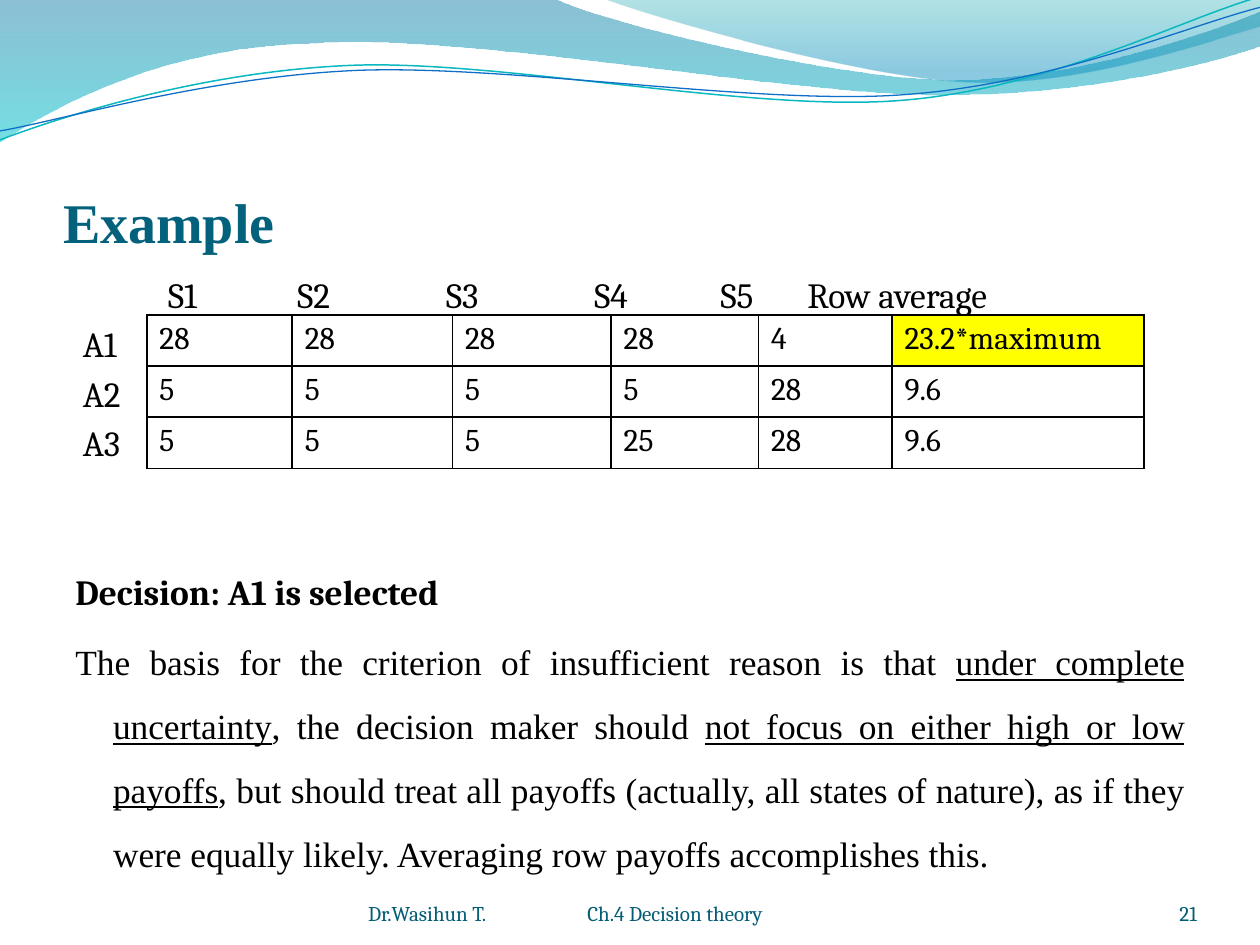
"""Build the decision theory example slide with its payoff table."""
from dataclasses import dataclass
from typing import NamedTuple

from lxml.etree import SubElement
from pptx import Presentation
from pptx.dml.color import RGBColor as Rgb
from pptx.enum.text import MSO_ANCHOR as Anchor, PP_ALIGN as Align
from pptx.oxml.ns import qn
from pptx.util import Cm, Pt


@dataclass(frozen=True)
class Theme:
    heading: str = "04617B"
    footer: str = "045D75"
    ink: str = "000000"
    highlight: str = "FFFF00"
    serif: str = "Times New Roman"
    body: str = "Cambria"
    heading_size: float = 32
    body_size: float = 20.2
    cell_size: float = 18
    footer_size: float = 12
    space_before: float = 4


class Box(NamedTuple):
    left: float
    top: float
    width: float
    height: float


class Stop(NamedTuple):
    position: float
    color: str
    opacity: int


class Wave(NamedTuple):
    start: tuple
    segments: tuple
    stops: tuple = ()
    line: tuple = ()


class Label(NamedTuple):
    text: str
    gap_after: float = 0


THEME = Theme()
WAVES = (
    Wave((0, 0), ((11.18, -0.03), (12.09, 0.43, 16.87, 1.6, 19.25, 1.6),
                  (21.67, 1.6, 24.33, 0.66, 25.4, 0.23), (25.43, 0.91),
                  (24.97, 1.12, 22.1, 1.93, 18.95, 1.91),
                  (15.8, 1.91, 9.7, 0.71, 6.53, 0.86),
                  (3.28, 0.91, 1.17, 2.11, -0.03, 2.87)),
         stops=(Stop(0, "0074A1", 45), Stop(1, "00C6CF", 55))),
    Wave((12.17, -0.03), ((12.93, 0.28, 17.32, 1.57, 19.53, 1.65),
                          (21.74, 1.75, 24.41, 0.81, 25.4, 0.53), (25.4, 0)),
         stops=(Stop(0, "00A1A9", 30), Stop(0.8, "008BBF", 45))),
    Wave((0, 2.82), ((1.22, 2.36, 4.01, 1.45, 7.04, 1.32),
                     (10.03, 1.19, 15.06, 2.26, 18.11, 2.03),
                     (21.16, 1.8, 23.83, 0.38, 25.35, -0.05)),
         line=("0AB8BF", 0.85)),
    Wave((0, 2.64), ((1.19, 2.44, 4.17, 1.55, 7.19, 1.42),
                     (10.24, 1.3, 15.32, 2.13, 18.21, 1.91),
                     (21.23, 1.7, 23.9, 0.53, 25.4, 0.15)),
         line=("0F6FC6", 0.75)),
)
STATES = (Label("S1", 53), Label("S2", 61.9), Label("S3", 61.9),
          Label("S4", 48.6), Label("S5", 26.5), Label("Row average"))
CREDITS = (Label("Dr.Wasihun T.", 55.1), Label("Ch.4 Decision theory"))
ACTIONS = ("A1", "A2", "A3")
PAYOFFS = (("28", "28", "28", "28", "4", "23.2*maximum"),
           ("5", "5", "5", "5", "28", "9.6"),
           ("5", "5", "5", "25", "28", "9.6"))
COLUMN_WIDTHS = (2.93, 3.23, 3.2, 2.97, 2.69, 5.08)
ROW_HEIGHT = 1.03
REASONING = (
    ("The basis for the criterion of insufficient reason is that ", False),
    ("under complete uncertainty", True),
    (", the decision maker should ", False),
    ("not focus on either high or low payoffs", True),
    (", but should treat all payoffs (actually, all states of nature), as if they "
     "were equally likely. Averaging row payoffs accomplishes this.", False),
)


def write(paragraph, text: str, *, size: float = THEME.body_size, font: str = THEME.body,
          color: str = THEME.ink, bold: bool = False, underline: bool = False,
          spacing: float = 0) -> None:
    """Add a formatted run to a paragraph."""
    run = paragraph.add_run()
    run.text = text
    run.font.size, run.font.name = Pt(size), font
    run.font.bold, run.font.underline = bold, underline
    run.font.color.rgb = Rgb.from_string(color)
    if spacing:
        run._r.get_or_add_rPr().set("spc", str(round(spacing * 100)))


def write_labels(paragraph, labels: tuple, **style) -> None:
    """Write labels on one line, each followed by a space widened by its gap."""
    for label in labels:
        write(paragraph, label.text, **style)
        if label.gap_after:
            write(paragraph, " ", spacing=label.gap_after, **style)


def set_layout(paragraph, *, indent: float = 0, hanging: float = 0,
               before: float = 0) -> None:
    """Set the indents and the space before a paragraph."""
    paragraph.space_before = Pt(before)
    properties = paragraph._p.get_or_add_pPr()
    properties.set("marL", str(Cm(indent)))
    properties.set("indent", str(-Cm(hanging)))


def draw_wave(slide, wave: Wave) -> None:
    """Draw a wave of lines and cubic curves as a gradient area or a thin line."""
    points = [(Cm(x), Cm(y)) for part in wave.segments
              for x, y in zip(part[::2], part[1::2])]
    builder = slide.shapes.build_freeform(*map(Cm, wave.start))
    builder.add_line_segments(points, close=bool(wave.stops))
    shape = builder.convert_to_shape()
    lines = iter(list(shape._element.iter(qn("a:lnTo"))))
    for part in wave.segments:
        first = next(lines)
        if len(part) == 6:
            curve = first.makeelement(qn("a:cubicBezTo"))
            first.addprevious(curve)
            for node in (first, next(lines), next(lines)):
                curve.append(node[0])
                node.getparent().remove(node)
    shape.shadow.inherit = False
    if wave.line:
        color, width = wave.line
        shape.fill.background()
        shape.line.color.rgb = Rgb.from_string(color)
        shape.line.width = Pt(width)
        return
    shape.line.fill.background()
    shape.fill.gradient()
    shape.fill.gradient_angle = 270
    for target, stop in zip(shape.fill.gradient_stops, wave.stops):
        target.position = stop.position
        target.color.rgb = Rgb.from_string(stop.color)
        color_node = target._gs.find(qn("a:srgbClr"))
        SubElement(color_node, qn("a:alpha"), val=str(stop.opacity * 1000))


def add_text_frame(slide, box: Box):
    """Add a wrapping text box and return its frame."""
    frame = slide.shapes.add_textbox(*map(Cm, box)).text_frame
    frame.word_wrap = True
    return frame


def draw_heading(slide, text: str, box: Box) -> None:
    """Place and format the title placeholder."""
    title = slide.shapes.title
    title.left, title.top, title.width, title.height = map(Cm, box)
    frame = title.text_frame
    frame.vertical_anchor = Anchor.BOTTOM
    frame.margin_left = frame.margin_right = frame.margin_bottom = 0
    frame.paragraphs[0].alignment = Align.LEFT
    write(frame.paragraphs[0], text, size=THEME.heading_size, font=THEME.serif,
          color=THEME.heading, bold=True)


def draw_body(slide, box: Box) -> None:
    """Write the table labels, the decision and its reasoning."""
    frame = add_text_frame(slide, box)
    header = frame.paragraphs[0]
    set_layout(header, indent=1.87, before=THEME.space_before)
    write_labels(header, STATES)
    for action in ACTIONS:
        label = frame.add_paragraph()
        set_layout(label, indent=0.15, before=THEME.space_before)
        write(label, action)
    decision = frame.add_paragraph()
    set_layout(decision, indent=0.76, hanging=0.76, before=60.6)
    write(decision, "Decision: A1 is selected", bold=True)
    reasoning = frame.add_paragraph()
    reasoning.alignment, reasoning.line_spacing = Align.JUSTIFY, 1.5
    set_layout(reasoning, indent=0.76, hanging=0.76, before=THEME.space_before)
    for text, underline in REASONING:
        write(reasoning, text, font=THEME.serif, underline=underline)


def draw_cell(cell, text: str) -> None:
    """Border, fill and write one payoff cell."""
    properties = cell._tc.get_or_add_tcPr()
    for side in ("lnL", "lnR", "lnT", "lnB"):
        border = SubElement(properties, qn(f"a:{side}"), w=str(Pt(1)))
        SubElement(SubElement(border, qn("a:solidFill")), qn("a:srgbClr"), val=THEME.ink)
    if "maximum" in text:
        cell.fill.solid()
        cell.fill.fore_color.rgb = Rgb.from_string(THEME.highlight)
    else:
        cell.fill.background()
    write(cell.text_frame.paragraphs[0], text, size=THEME.cell_size)


def draw_payoffs(slide, left: float, top: float) -> None:
    """Draw the payoff table."""
    box = Box(left, top, sum(COLUMN_WIDTHS), ROW_HEIGHT * len(PAYOFFS))
    table = slide.shapes.add_table(len(PAYOFFS), len(COLUMN_WIDTHS), *map(Cm, box)).table
    table.first_row = table.horz_banding = False
    for column, width in zip(table.columns, COLUMN_WIDTHS):
        column.width = Cm(width)
    for row, payoffs in zip(table.rows, PAYOFFS):
        row.height = Cm(ROW_HEIGHT)
        for cell, payoff in zip(row.cells, payoffs):
            draw_cell(cell, payoff)


def draw_footer(slide, labels: tuple, box: Box, align: Align) -> None:
    """Write one footer entry at the bottom of its box."""
    frame = add_text_frame(slide, box)
    frame.vertical_anchor = Anchor.BOTTOM
    frame.margin_left = frame.margin_right = frame.margin_top = frame.margin_bottom = 0
    frame.paragraphs[0].alignment = align
    write_labels(frame.paragraphs[0], labels, size=THEME.footer_size, color=THEME.footer)


def main() -> None:
    """Build and save the slide."""
    deck = Presentation()
    deck.slide_width, deck.slide_height = Cm(25.4), Cm(19.05)
    slide = deck.slides.add_slide(deck.slide_layouts[5])
    for wave in WAVES:
        draw_wave(slide, wave)
    draw_heading(slide, "Example", Box(1.27, 1.96, 22.86, 3.18))
    draw_body(slide, Box(1.27, 5.38, 22.86, 12.19))
    draw_payoffs(slide, 2.96, 6.35)
    draw_footer(slide, (Label("21"),), Box(22.02, 17.65, 2.11, 1.02), Align.RIGHT)
    draw_footer(slide, CREDITS, Box(7.42, 17.65, 9.32, 1.02), Align.LEFT)
    deck.save("out.pptx")


if __name__ == "__main__":
    main()
